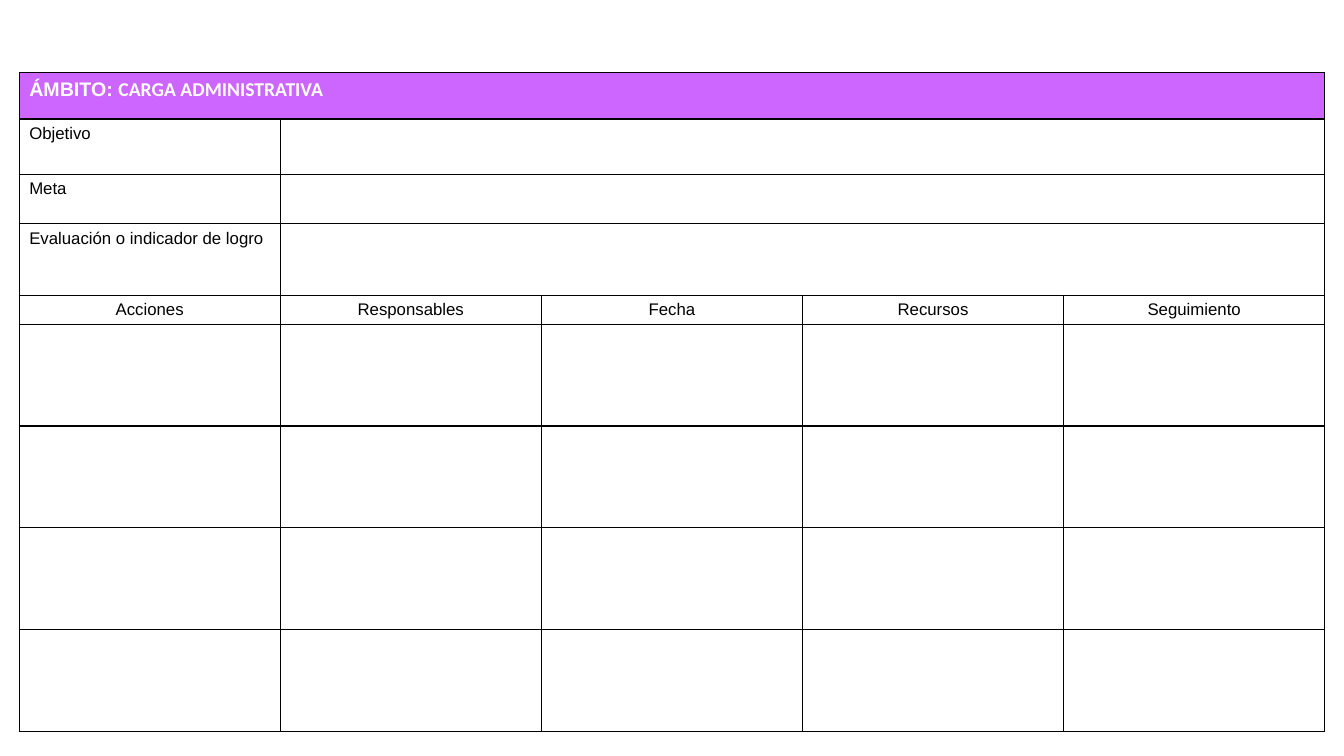
from dataclasses import dataclass

from lxml import etree
from pptx import Presentation
from pptx.dml.color import RGBColor
from pptx.enum.text import PP_ALIGN
from pptx.oxml.ns import qn
from pptx.util import Inches, Pt

LEFT, CENTER = PP_ALIGN.LEFT, PP_ALIGN.CENTER


@dataclass(frozen=True)
class Theme:
    accent: str = "CC66FF"
    paper: str = "FFFFFF"
    ink: str = "000000"
    font: str = "Arial"
    title_font: str = "Calibri"
    title_size: int = 14
    body_size: int = 12
    border: int = 1


THEME = Theme()
COL_W = 2.59
COL_COUNT = 5
FIELDS = [("Objetivo", 0.55), ("Meta", 0.49), ("Evaluación o indicador de logro", 0.71)]
HEADINGS = ["Acciones", "Responsables", "Fecha", "Recursos", "Seguimiento"]
TITLE_H, HEADING_H, ACTION_H = 0.46, 0.28, 1.01
ACTION_ROWS = 4


def add_text(p, text, font=THEME.font, size=THEME.body_size, color=THEME.ink,
             bold=False, align=LEFT):
    p.alignment = align
    r = p.add_run()
    r.text = text
    r.font.name = font
    r.font.size = Pt(size)
    r.font.bold = bold
    r.font.color.rgb = RGBColor.from_string(color)


class SlideBuilder:
    def __init__(self, prs, theme):
        self.theme = theme
        self.s = prs.slides.add_slide(prs.slide_layouts[6])

    def table(self, left, top, col_widths, row_heights):
        shape = self.s.shapes.add_table(
            len(row_heights), len(col_widths), Inches(left), Inches(top),
            Inches(sum(col_widths)), Inches(sum(row_heights)))
        table = shape.table
        for col, width in zip(table.columns, col_widths):
            col.width = Inches(width)
        for row, height in zip(table.rows, row_heights):
            row.height = Inches(height)
        for cell in table.iter_cells():
            self.fill(cell, self.theme.paper)
            self.borders(cell)
        return table

    def fill(self, cell, color):
        cell.fill.solid()
        cell.fill.fore_color.rgb = RGBColor.from_string(color)

    def borders(self, cell):
        """Draw all four cell edges; the schema wants them before the fill."""
        tc_pr = cell._tc.get_or_add_tcPr()
        for i, side in enumerate(("a:lnL", "a:lnR", "a:lnT", "a:lnB")):
            ln = etree.Element(qn(side), w=str(Pt(self.theme.border)))
            solid = etree.SubElement(ln, qn("a:solidFill"))
            etree.SubElement(solid, qn("a:srgbClr"), val=self.theme.ink)
            tc_pr.insert(i, ln)

    def title(self, table, label, name):
        cell = table.cell(0, 0)
        cell.merge(table.cell(0, COL_COUNT - 1))
        self.fill(cell, self.theme.accent)
        p = cell.text_frame.paragraphs[0]
        for text, font in ((label, self.theme.font), (name, self.theme.title_font)):
            add_text(p, text, font=font, size=self.theme.title_size,
                     color=self.theme.paper, bold=True)

    def field(self, table, row, label):
        add_text(table.cell(row, 0).text_frame.paragraphs[0], label)
        table.cell(row, 1).merge(table.cell(row, COL_COUNT - 1))

    def headings(self, table, row, labels):
        for col, label in enumerate(labels):
            add_text(table.cell(row, col).text_frame.paragraphs[0], label, align=CENTER)


def main():
    prs = Presentation()
    prs.slide_width, prs.slide_height = Inches(13.33), Inches(7.5)
    slide = SlideBuilder(prs, THEME)
    heights = [TITLE_H, *(h for _, h in FIELDS), HEADING_H, *[ACTION_H] * ACTION_ROWS]
    plan = slide.table(0.19, 0.72, [COL_W] * COL_COUNT, heights)
    slide.title(plan, "ÁMBITO: ", "CARGA ADMINISTRATIVA")
    for row, (label, _) in enumerate(FIELDS, start=1):
        slide.field(plan, row, label)
    slide.headings(plan, len(FIELDS) + 1, HEADINGS)
    prs.save("out.pptx")


if __name__ == "__main__":
    main()
